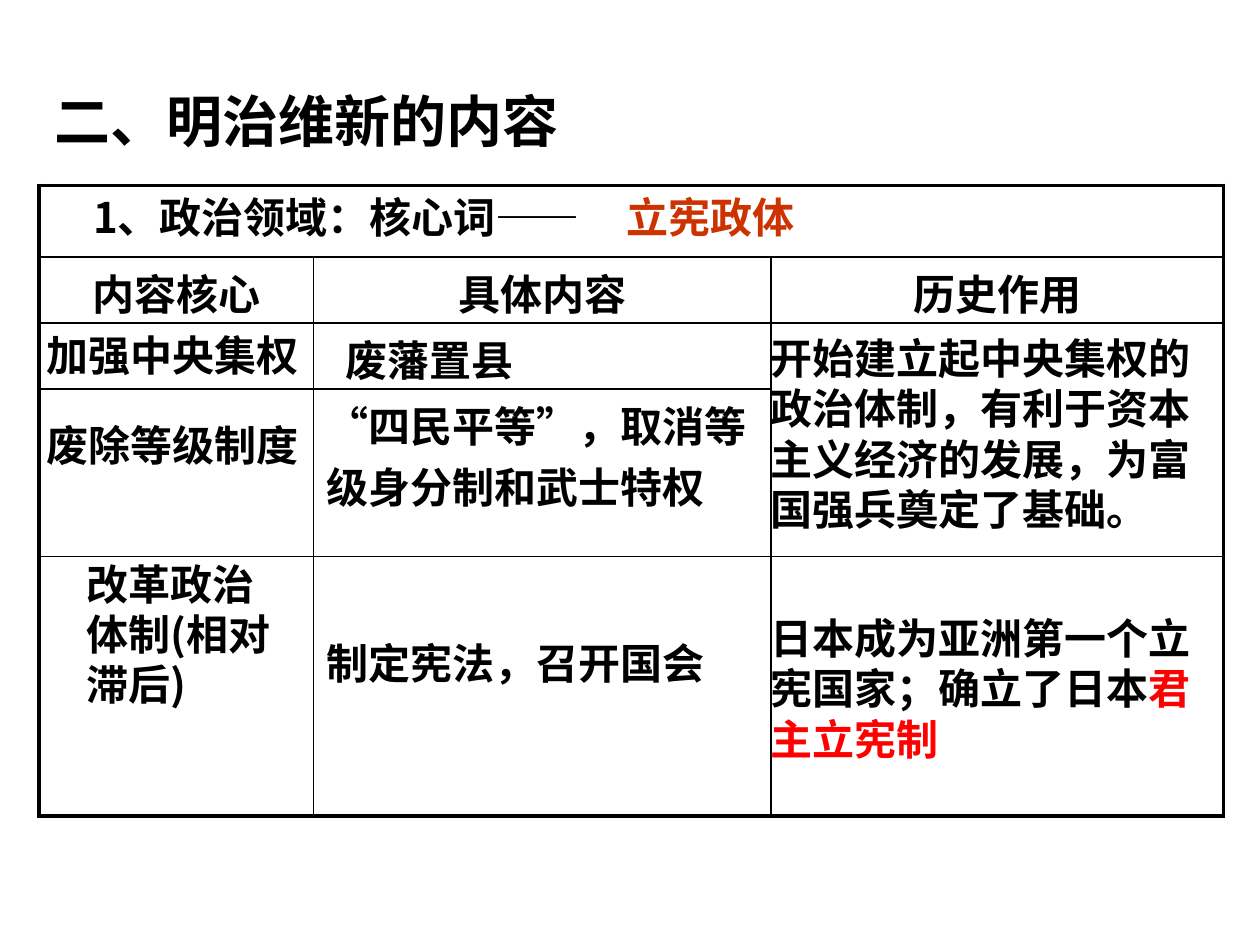
from lxml import etree
from pptx import Presentation
from pptx.dml.color import RGBColor
from pptx.enum.text import MSO_ANCHOR, MSO_AUTO_SIZE, PP_ALIGN
from pptx.oxml.ns import qn
from pptx.util import Inches, Pt

BLACK = RGBColor(0x00, 0x00, 0x00)
RED = RGBColor(0xFF, 0x00, 0x00)
RUST = RGBColor(0xCC, 0x33, 0x00)
CJK_FONT = "Noto Sans CJK SC"
LATIN_FONT = "Arial"
LEFT, CENTER = PP_ALIGN.LEFT, PP_ALIGN.CENTER
TOP, NO_RESIZE = MSO_ANCHOR.TOP, MSO_AUTO_SIZE.NONE
OUTER, INNER = Pt(2.25), Pt(1)

COLUMNS = [2.18, 3.63, 3.59]
ROWS = [0.57, 0.52, 0.52, 1.33, 2.06]
MERGES = [((0, 0), (0, 2)), ((2, 2), (3, 2))]

# row, column, text, alignment, left margin, top margin
CELLS = [
    (1, 0, "内容核心", CENTER, 0.1, 0.04),
    (1, 1, "具体内容", CENTER, 0.1, 0.04),
    (1, 2, "历史作用", CENTER, 0.1, 0.04),
    (2, 1, "废藩置县", LEFT, 0.25, 0.04),
    (3, 1, "“四民平等”，取消等级身分制和武士特权", LEFT, 0.1, 0.04),
    (4, 1, "制定宪法，召开国会", LEFT, 0.1, 0.59),
]

# box, font, runs of text and colour
LABELS = [
    ((0.27, 2.57, 2.28, 0.5), CJK_FONT, [("加强中央集权", BLACK)]),
    ((0.27, 3.28, 2.44, 0.5), CJK_FONT, [("废除等级制度", BLACK)]),
    ((0.59, 4.38, 1.81, 1.3), CJK_FONT, [("改革政治体制(相对滞后)", BLACK)]),
    ((6.02, 2.59, 3.69, 1.72), CJK_FONT,
     [("开始建立起中央集权的政治体制，有利于资本主义经济的发展，为富国强兵奠定了基础。", BLACK)]),
    ((6.02, 4.81, 3.72, 1.3), CJK_FONT,
     [("日本成为亚洲第一个立宪国家；确立了日本", BLACK), ("君主立宪制", RED)]),
    ((0.64, 1.47, 6.88, 0.5), CJK_FONT, [("1、政治领域：核心词——", BLACK)]),
    ((4.87, 1.47, 1.65, 0.5), LATIN_FONT, [("立宪政体", RUST)]),
]


def write(paragraph, runs, size=24, font=CJK_FONT):
    """Fill a paragraph with bold coloured runs, in Chinese type."""
    paragraph.font.size = Pt(size)
    paragraph.font.bold = True
    paragraph.font.name = font
    for text, colour in runs:
        run = paragraph.add_run()
        run.text = text
        run.font.color.rgb = colour
        properties = run.font._element
        properties.set("lang", "zh-CN")
        etree.SubElement(properties, qn("a:ea")).set("typeface", CJK_FONT)


def prepare_frame(frame):
    frame.word_wrap = True
    frame.auto_size = NO_RESIZE
    frame.vertical_anchor = TOP
    paragraph = frame.paragraphs[0]
    paragraph.alignment = LEFT
    return paragraph


def add_title(slide, box):
    title = slide.shapes.title
    title.left, title.top, title.width, title.height = map(Inches, box)
    write(prepare_frame(title.text_frame), [("二、明治维新的内容", BLACK)], 32)


def add_label(slide, box, font, runs):
    label = slide.shapes.add_textbox(*map(Inches, box))
    write(prepare_frame(label.text_frame), runs, font=font)


def set_borders(cell, widths):
    """Draw solid black edges; the fill has to come after them."""
    properties = cell._tc.get_or_add_tcPr()
    for side, width in widths.items():
        line = etree.SubElement(properties, qn(f"a:{side}"), w=str(width))
        fill = etree.SubElement(line, qn("a:solidFill"))
        etree.SubElement(fill, qn("a:srgbClr"), val=str(BLACK))
    cell.fill.background()


def add_reform_table(slide, box):
    table = slide.shapes.add_table(len(ROWS), len(COLUMNS), *map(Inches, box)).table
    table.first_row = table.horz_banding = False
    for column, width in zip(table.columns, COLUMNS):
        column.width = Inches(width)
    for row, height in zip(table.rows, ROWS):
        row.height = Inches(height)
    for start, end in MERGES:
        table.cell(*start).merge(table.cell(*end))

    last_row, last_column = len(ROWS) - 1, len(COLUMNS) - 1
    for r in range(len(ROWS)):
        for c in range(len(COLUMNS)):
            cell = table.cell(r, c)
            right = c + cell.span_width - 1 if cell.is_merge_origin else c
            set_borders(cell, {
                "lnL": OUTER if c == 0 else INNER,
                "lnR": OUTER if right == last_column else INNER,
                "lnT": OUTER if r == 0 else INNER,
                "lnB": OUTER if r == last_row else INNER,
            })

    for r, c, text, alignment, left, top in CELLS:
        cell = table.cell(r, c)
        cell.margin_left, cell.margin_top = Inches(left), Inches(top)
        cell.margin_bottom = 0
        paragraph = cell.text_frame.paragraphs[0]
        paragraph.alignment = alignment
        write(paragraph, [(text, BLACK)])


def main():
    presentation = Presentation()
    presentation.slide_width, presentation.slide_height = Inches(10), Inches(7.5)
    slide = presentation.slides.add_slide(presentation.slide_layouts[5])
    add_title(slide, (0.33, 0.64, 6.48, 0.63))
    add_reform_table(slide, (0.31, 1.47, sum(COLUMNS), sum(ROWS)))
    for box, font, runs in LABELS:
        add_label(slide, box, font, runs)
    presentation.save("out.pptx")


if __name__ == "__main__":
    main()
